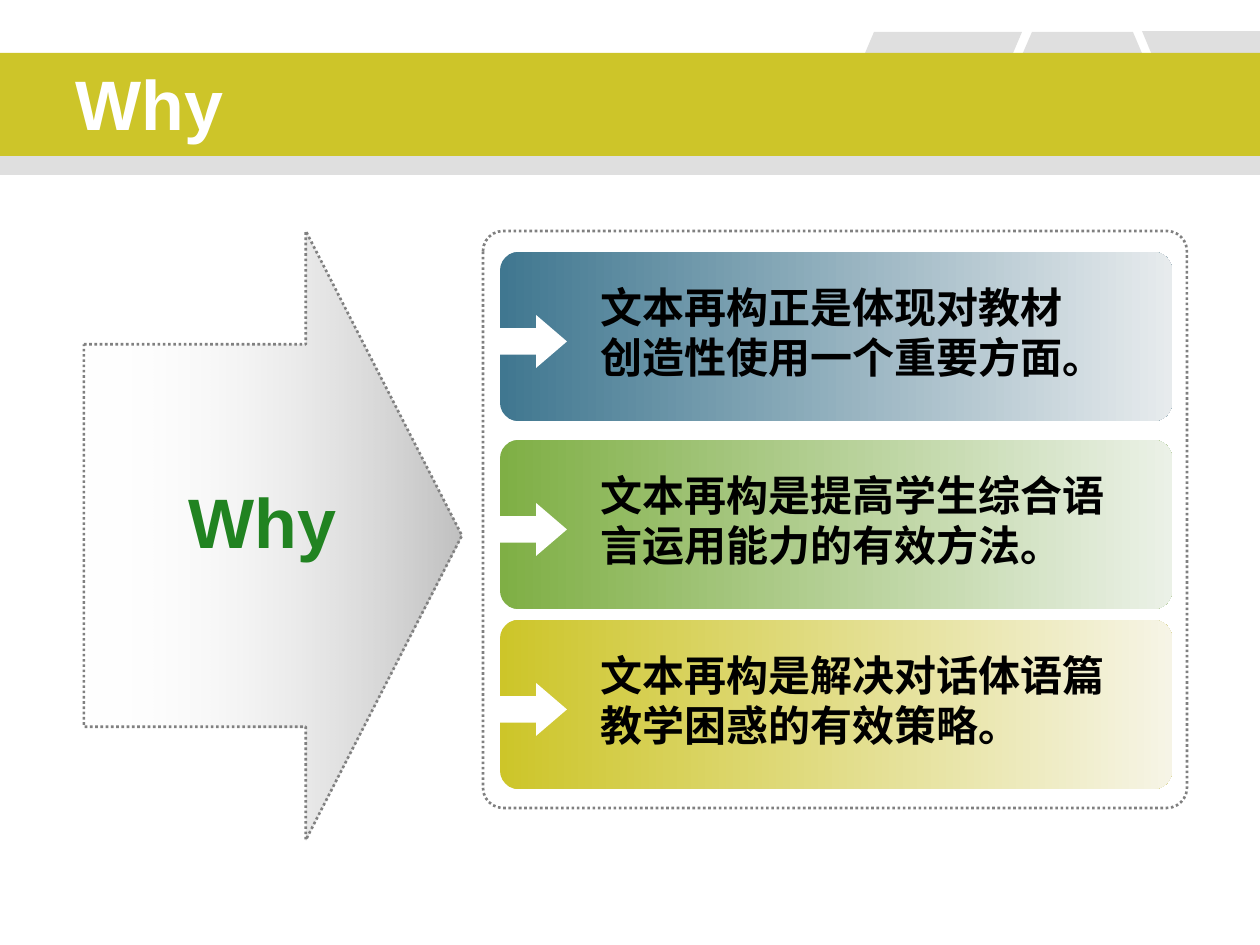
import pptx
import pptx.util
import pptx.dml.color
import pptx.enum.dml
import pptx.enum.shapes
import pptx.enum.text
import pptx.oxml
import pptx.oxml.ns

EMU_PER_PX = 914400 / 126
SHAPES = pptx.enum.shapes.MSO_SHAPE
FONT = "Arial"
GREY = "808080"
WHITE = "FFFFFF"
YELLOW = "CDC529"

CARDS = [
    (252, "407790", "E7EBED", ["文本再构正是体现对教材", "创造性使用一个重要方面。"]),
    (440, "7FAF45", "EBF1E7", ["文本再构是提高学生综合语言运用能力的有效方法。"]),
    (620, YELLOW, "F6F4E6", ["文本再构是解决对话体语篇教学困惑的有效策略。"]),
]


def px(length):
    return pptx.util.Emu(round(length * EMU_PER_PX))


def rgb(value):
    return pptx.dml.color.RGBColor.from_string(value)


def set_opacity(container, percent):
    """Make every RGB colour inside container partly transparent."""
    for color in container.iter(pptx.oxml.ns.qn("a:srgbClr")):
        alpha = pptx.oxml.parse_xml(
            f'<a:alpha {pptx.oxml.ns.nsdecls("a")} val="{percent * 1000}"/>')
        color.append(alpha)


def fill_solid(shape, color, opacity=100):
    shape.shadow.inherit = False
    shape.line.fill.background()
    shape.fill.solid()
    shape.fill.fore_color.rgb = rgb(color)
    if opacity < 100:
        set_opacity(shape.fill._xPr, opacity)


def fill_gradient(shape, colors, opacities=(100, 100)):
    """Fill from left to right with two colours."""
    shape.fill.gradient()
    shape.fill.gradient_angle = 0
    for stop, position, color, opacity in zip(
            shape.fill.gradient_stops, (0, 1), colors, opacities):
        stop.position = position
        stop.color.rgb = rgb(color)
        if opacity < 100:
            set_opacity(stop._gs, opacity)


def add_preset(slide, kind, left, top, width, height, adjustments=()):
    shape = slide.shapes.add_shape(kind, px(left), px(top), px(width), px(height))
    shape.shadow.inherit = False
    shape.fill.background()
    shape.line.fill.background()
    for index, value in enumerate(adjustments):
        shape.adjustments[index] = value
    return shape


def add_polygon(slide, points):
    builder = slide.shapes.build_freeform(*points[0], scale=EMU_PER_PX)
    builder.add_line_segments(points[1:], close=True)
    return builder.convert_to_shape()


def outline_dotted(shape):
    shape.line.color.rgb = rgb(GREY)
    shape.line.width = pptx.util.Pt(1.5)
    shape.line.dash_style = pptx.enum.dml.MSO_LINE.ROUND_DOT


def add_text(slide, left, top, width, height, lines, size, color, middle=False):
    box = slide.shapes.add_textbox(px(left), px(top), px(width), px(height))
    frame = box.text_frame
    frame.word_wrap = True
    if middle:
        frame.vertical_anchor = pptx.enum.text.MSO_ANCHOR.MIDDLE
    for index, line in enumerate(lines):
        paragraph = frame.add_paragraph() if index else frame.paragraphs[0]
        run = paragraph.add_run()
        run.text = line
        run.font.name = FONT
        run.font.size = pptx.util.Pt(size)
        run.font.bold = True
        run.font.color.rgb = rgb(color)
        east_asian = pptx.oxml.parse_xml(
            f'<a:ea {pptx.oxml.ns.nsdecls("a")} typeface="{FONT}"/>')
        run.font._element.append(east_asian)


def add_header(slide):
    grey_parts = [
        add_preset(slide, SHAPES.RECTANGLE, 0, 112, 1260, 63),
        add_preset(slide, SHAPES.PARALLELOGRAM, 823, 32, 199, 120, [0.425]),
        add_polygon(slide, [(1184, 152), (1133, 32), (1032, 32), (980, 152)]),
        add_polygon(slide, [(1142, 31), (1192, 151), (1262, 151), (1262, 31)]),
    ]
    for part in grey_parts:
        fill_solid(part, GREY, opacity=25)
    fill_solid(add_preset(slide, SHAPES.RECTANGLE, 0, 53, 1260, 103), YELLOW)
    add_text(slide, 63, 59, 777, 88, ["Why"], 40, WHITE, middle=True)


def add_question_arrow(slide):
    arrow = add_preset(slide, SHAPES.RIGHT_ARROW, 84, 231, 378, 609, [0.628, 0.413])
    fill_gradient(arrow, (WHITE, GREY), (0, 50))
    outline_dotted(arrow)
    add_text(slide, 176, 472, 286, 97, ["Why"], 40, "218321")


def add_card(slide, top, start_color, end_color, lines):
    card = add_preset(slide, SHAPES.ROUNDED_RECTANGLE, 500, top, 672, 169, [0.109])
    fill_gradient(card, (start_color, end_color))
    pointer = add_preset(slide, SHAPES.RIGHT_ARROW, 494, top + 63, 73, 53, [0.5, 0.583])
    fill_solid(pointer, WHITE)
    add_text(slide, 588, top + 23, 556, 113, lines, 24, "000000")


def main():
    presentation = pptx.Presentation()
    presentation.slide_width = px(1260)
    presentation.slide_height = px(945)
    slide = presentation.slides.add_slide(presentation.slide_layouts[6])
    add_header(slide)
    add_question_arrow(slide)
    frame = add_preset(slide, SHAPES.ROUNDED_RECTANGLE, 483, 231, 704, 577, [0.035])
    outline_dotted(frame)
    for card in CARDS:
        add_card(slide, *card)
    presentation.save("out.pptx")


if __name__ == "__main__":
    main()
